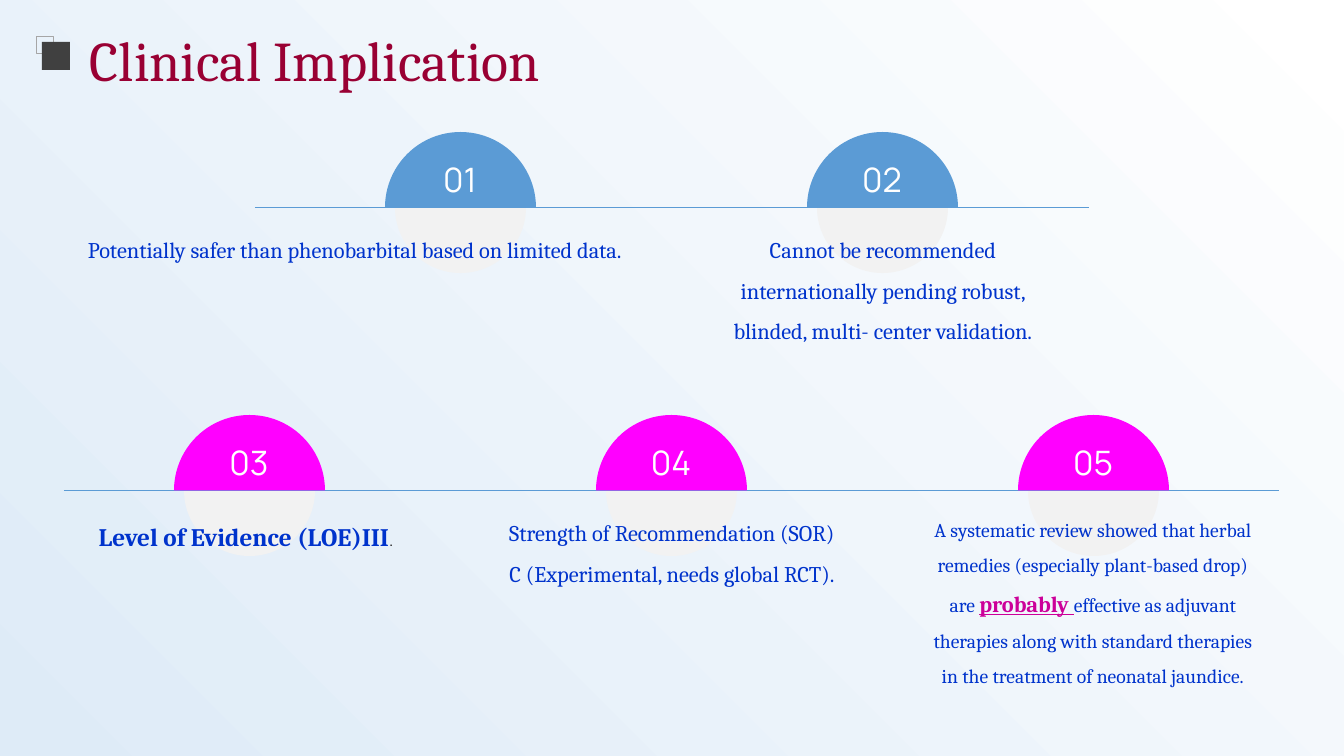
import lxml.etree
import pptx
import pptx.dml.color
import pptx.enum.shapes
import pptx.enum.text
import pptx.oxml.ns
import pptx.util

SHAPE = pptx.enum.shapes.MSO_SHAPE
ALIGN = pptx.enum.text.PP_ALIGN
ANCHOR = pptx.enum.text.MSO_ANCHOR
WIDE, HIGH = 1344, 756
THIN = pptx.util.Pt(0.5)
BODY = {"name": "Cambria", "size": 16, "color": "0033CC"}
SMALL = BODY | {"size": 14}
LEVEL = BODY | {"size": 18, "bold": True}
STOP = {"name": "Manrope", "size": 12, "color": "262626"}
STRESS = BODY | {"color": "CC0099", "bold": True, "underline": True}
LABEL = {"name": "Manrope", "size": 24, "color": "FFFFFF"}
TITLE = {"name": "Cambria", "size": 40, "color": "990033"}


def px(count):
    return pptx.util.Emu(round(count * 914400 / 100.8))


def tint(code):
    return pptx.dml.color.RGBColor.from_string(code)


class Board:
    def __init__(self, slide):
        self.items = slide.shapes

    def shape(self, kind, left, top, width, height, fill=None, edge=None):
        shape = self.items.add_shape(kind, *map(px, (left, top, width, height)))
        shape.shadow.inherit = False
        if fill:
            shape.fill.solid()
            shape.fill.fore_color.rgb = tint(fill)
        else:
            shape.fill.background()
        if edge:
            shape.line.color.rgb = tint(edge)
            shape.line.width = THIN
        else:
            shape.line.fill.background()
        return shape

    def fade(self, first, last):
        """Cover the slide with a blend from top right to bottom left."""
        shape = self.shape(SHAPE.RECTANGLE, 0, 0, WIDE, HIGH)
        shape.fill.gradient()
        shape.fill.gradient_angle = 225
        for stop, code, place in zip(shape.fill.gradient_stops, (first, last), (0, 1)):
            stop.color.rgb = tint(code)
            stop.position = place

    def half(self, mid, axis, size, turn, fill):
        """Draw a half disc on the axis: turn 90 faces up, 270 faces down."""
        left, top = mid - size // 2, axis - size // 2
        shape = self.shape(SHAPE.PIE, left, top, size, size, fill)
        shape.adjustments[0], shape.adjustments[1] = 54, 162
        shape.rotation = turn

    def line(self, start, end, axis, code):
        line = self.items.add_connector(
            pptx.enum.shapes.MSO_CONNECTOR.STRAIGHT, *map(px, (start, axis, end, axis)))
        line.line.color.rgb = tint(code)
        line.line.width = THIN
        lxml.etree.SubElement(line._element.spPr, pptx.oxml.ns.qn("a:effectLst"))

    def text(self, left, top, width, height, runs, space,
             align=ALIGN.CENTER, anchor=ANCHOR.TOP):
        box = self.items.add_textbox(*map(px, (left, top, width, height)))
        frame = box.text_frame
        style = {"word_wrap": True, "vertical_anchor": anchor, "margin_left": 0,
                 "margin_top": 0, "margin_right": 0, "margin_bottom": 0}
        for key, value in style.items():
            setattr(frame, key, value)
        para = frame.paragraphs[0]
        para.alignment = align
        para.line_spacing = space
        for words, look in runs:
            run = para.add_run()
            run.text = words
            for key, value in look.items():
                if key == "color":
                    run.font.color.rgb = tint(value)
                else:
                    setattr(run.font, key, pptx.util.Pt(value) if key == "size" else value)


# Each row: axis, line start and end, dome colour, first middle, notes.
# Each note: left, width, runs.
ROWS = [
    (207, 255, 1089, "5B9BD5", 460, [
        (81, 548, [("Potentially safer than phenobarbital based on limited data.", BODY)]),
        (714, 338, [("Cannot be recommended internationally pending robust, "
                     "blinded, multi- center validation.", BODY)]),
    ]),
    (490, 64, 1279, "FF00FF", 249, [
        (77, 338, [("Level of Evidence (LOE)III", LEVEL), (".", STOP)]),
        (503, 338, [("Strength of Recommendation (SOR) "
                     "C (Experimental, needs global RCT).", BODY)]),
        (924, 338, [("A systematic review showed that herbal remedies "
                     "(especially plant-based drop) are ", SMALL),
                    ("probably ", STRESS),
                    ("effective as adjuvant therapies along with standard therapies "
                     "in the treatment of neonatal jaundice.", SMALL)]),
    ]),
]
STEP = 422


def main():
    deck = pptx.Presentation()
    deck.slide_width, deck.slide_height = px(WIDE), px(HIGH)
    board = Board(deck.slides.add_slide(deck.slide_layouts[6]))
    board.fade("FFFFFF", "DEEBF7")

    number = 0
    for axis, start, end, dome, first, notes in ROWS:
        mids = [first + STEP * i for i in range(len(notes))]
        for mid in mids:
            board.half(mid, axis, 131, 270, "F2F2F2")
        board.line(start, end, axis, "5B9BD5")
        for mid, (left, width, runs) in zip(mids, notes):
            number += 1
            board.half(mid, axis, 151, 90, dome)
            board.text(mid - 40, axis - 52, 80, 39, [(f"{number:02}", LABEL)], 1.1)
            board.text(left, axis + 16, width, 162, runs, 1.5)

    board.text(90, 29, 1200, 47, [("Clinical Implication", TITLE)], 1.2,
               ALIGN.LEFT, ANCHOR.MIDDLE)
    board.shape(SHAPE.RECTANGLE, 36, 36, 17, 17, edge="A6A6A6")
    board.shape(SHAPE.RECTANGLE, 42, 42, 28, 28, fill="404040")
    deck.save("out.pptx")


if __name__ == "__main__":
    main()
